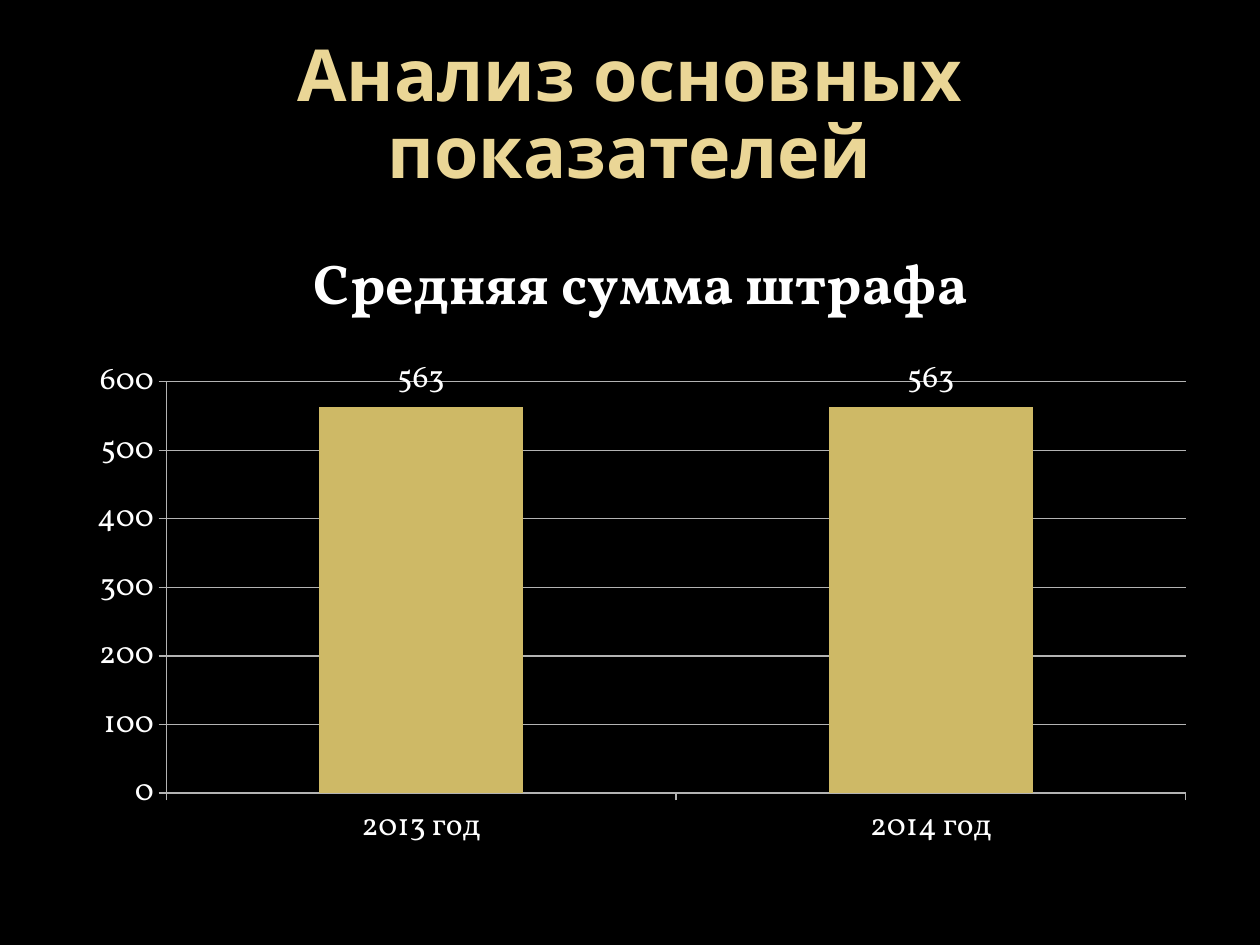
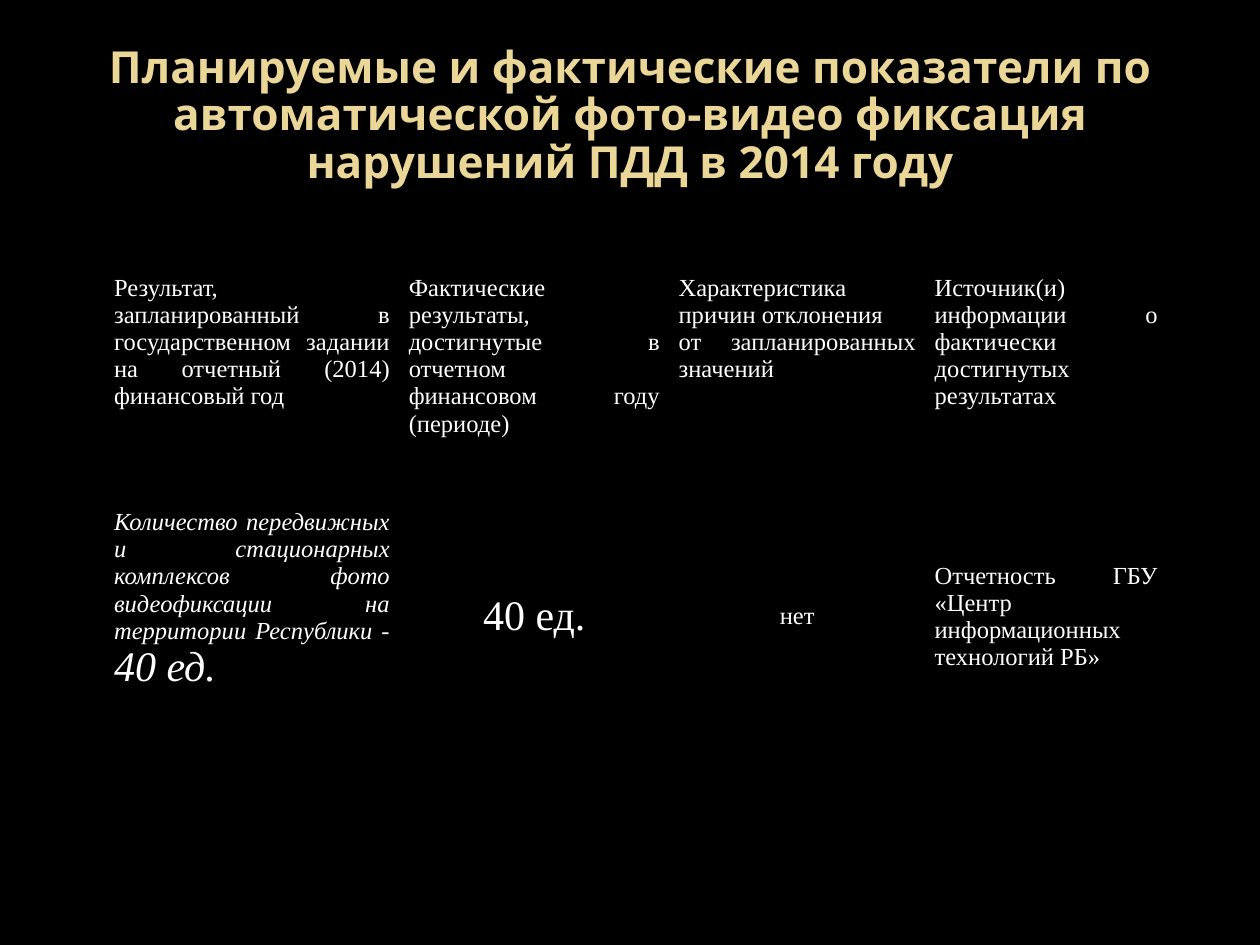
from lxml import etree
from pptx import Presentation
from pptx.chart.data import CategoryChartData
from pptx.dml.color import RGBColor
from pptx.enum.chart import XL_CHART_TYPE as ChartType, XL_LABEL_POSITION as LabelPosition
from pptx.enum.chart import XL_TICK_MARK as TickMark
from pptx.enum.text import MSO_ANCHOR as Anchor, MSO_AUTO_SIZE as AutoSize, PP_ALIGN as Align
from pptx.oxml.ns import qn
from pptx.util import Cm, Pt

BLACK = RGBColor(0x00, 0x00, 0x00)
WHITE = RGBColor(0xFF, 0xFF, 0xFF)
CREAM = RGBColor(0xEA, 0xD6, 0x96)
GOLD = RGBColor(0xCE, 0xB9, 0x66)
GREY = RGBColor(0xB3, 0xB3, 0xB3)
TITLE_FONT, CHART_FONT, TABLE_FONT = "Noto Sans", "Vollkorn", "Times New Roman"


def add_titled_slide(heading, size):
    slide = prs.slides.add_slide(prs.slide_layouts[5])
    title = slide.shapes.title
    title.left, title.top, title.width, title.height = Cm(1.27), Cm(0.76), Cm(22.86), Cm(3.18)
    frame = title.text_frame
    frame.text = heading
    frame.auto_size = AutoSize.NONE
    frame.word_wrap = True
    frame.vertical_anchor = Anchor.MIDDLE
    paragraph = frame.paragraphs[0]
    paragraph.alignment = Align.CENTER
    paragraph.line_spacing = 0.9
    font = paragraph.runs[0].font
    font.name, font.size, font.bold = TITLE_FONT, Pt(size), True
    font.color.rgb = CREAM
    return slide


def outline_cell(cell):
    """Draw a 1 pt black border on all four sides of a table cell."""
    properties = cell._tc.get_or_add_tcPr()
    for position, side in enumerate(("lnL", "lnR", "lnT", "lnB")):
        border = etree.Element(qn(f"a:{side}"), w=str(Pt(1)))
        fill = etree.SubElement(border, qn("a:solidFill"))
        etree.SubElement(fill, qn("a:srgbClr"), val=str(BLACK))
        properties.insert(position, border)


prs = Presentation()
prs.slide_width, prs.slide_height = Cm(25.4), Cm(19.05)
background = prs.slide_master.background.fill
background.solid()
background.fore_color.rgb = BLACK

# Slide 1: average fine
slide = add_titled_slide("Анализ основных показателей", 41)

fines = CategoryChartData()
fines.categories = ["2013 год", "2014 год"]
fines.add_series("Series 1", (563, 563))
chart = slide.shapes.add_chart(
    ChartType.COLUMN_CLUSTERED, Cm(1.5), Cm(4.32), Cm(22.86), Cm(13.08), fines).chart
chart.font.name, chart.font.size = CHART_FONT, Pt(18)
chart.font.color.rgb = WHITE
chart.has_legend = False

chart.has_title = True
chart.chart_title.include_in_layout = False
chart.chart_title.text_frame.text = "Средняя сумма штрафа"
caption = chart.chart_title.text_frame.paragraphs[0].runs[0].font
caption.name, caption.size, caption.bold = CHART_FONT, Pt(32), True
caption.color.rgb = WHITE

plot = chart.plots[0]
plot.gap_width = 150
plot.vary_by_categories = False
bars = plot.series[0].format.fill
bars.solid()
bars.fore_color.rgb = GOLD
plot.has_data_labels = True
plot.data_labels.show_value = True
plot.data_labels.position = LabelPosition.OUTSIDE_END

for axis in (chart.category_axis, chart.value_axis):
    axis.major_tick_mark = TickMark.OUTSIDE
    axis.minor_tick_mark = TickMark.NONE
    axis.format.line.color.rgb = GREY
amounts = chart.value_axis
amounts.minimum_scale, amounts.maximum_scale, amounts.major_unit = 0, 600, 100
amounts.has_major_gridlines = True
amounts.major_gridlines.format.line.color.rgb = GREY

# Slide 2: planned and actual results
slide = add_titled_slide(
    "Планируемые и фактические показатели по автоматической фото-видео фиксация "
    "нарушений ПДД в 2014 году", 25.2)

# Each row: (text, alignment, anchor, size) per cell
HEADER = (Align.JUSTIFY, Anchor.TOP, 14)
results = [
    [("Результат, запланированный в государственном задании на отчетный (2014) "
      "финансовый год", *HEADER),
     ("Фактические результаты,\nдостигнутые в отчетном\nфинансовом году (периоде)", *HEADER),
     ("Характеристика\nпричин отклонения\nот запланированных значений", *HEADER),
     ("Источник(и) информации о фактически достигнутых результатах", *HEADER)],
    [("Количество передвижных и стационарных комплексов фото видеофиксации "
      "на территории Республики - ", Align.JUSTIFY, Anchor.TOP, 14),
     ("40 ед.", Align.CENTER, Anchor.MIDDLE, 24),
     ("нет", Align.CENTER, Anchor.MIDDLE, 14),
     ("Отчетность ГБУ «Центр информационных технологий РБ»",
      Align.JUSTIFY, Anchor.MIDDLE, 14)],
]
table = slide.shapes.add_table(2, 4, Cm(2.11), Cm(5.54), Cm(21.41), Cm(9.6)).table
table.first_row = table.horz_banding = False
for column, width in zip(table.columns, (5.94, 5.44, 5.16, 4.88)):
    column.width = Cm(width)
for row, height in zip(table.rows, (4.17, 5.44)):
    row.height = Cm(height)

for row, entries in zip(table.rows, results):
    for cell, (text, alignment, anchor, size) in zip(row.cells, entries):
        cell.text_frame.text = text
        cell.vertical_anchor = anchor
        cell.margin_left = cell.margin_right = Cm(0.19)
        cell.margin_top = cell.margin_bottom = 0
        cell.fill.background()
        outline_cell(cell)
        for paragraph in cell.text_frame.paragraphs:
            paragraph.alignment = alignment
            for run in paragraph.runs:
                run.font.name, run.font.size = TABLE_FONT, Pt(size)
                run.font.color.rgb = WHITE

planned = table.cell(1, 0)
planned.margin_top = Cm(0.55)
goal = planned.text_frame.paragraphs[0]
quantity = goal.add_run()
quantity.text = "40 ед."
quantity.font.name, quantity.font.size = TABLE_FONT, Pt(24)
quantity.font.color.rgb = WHITE
for run in goal.runs:
    run.font.italic = True

prs.save("out.pptx")
